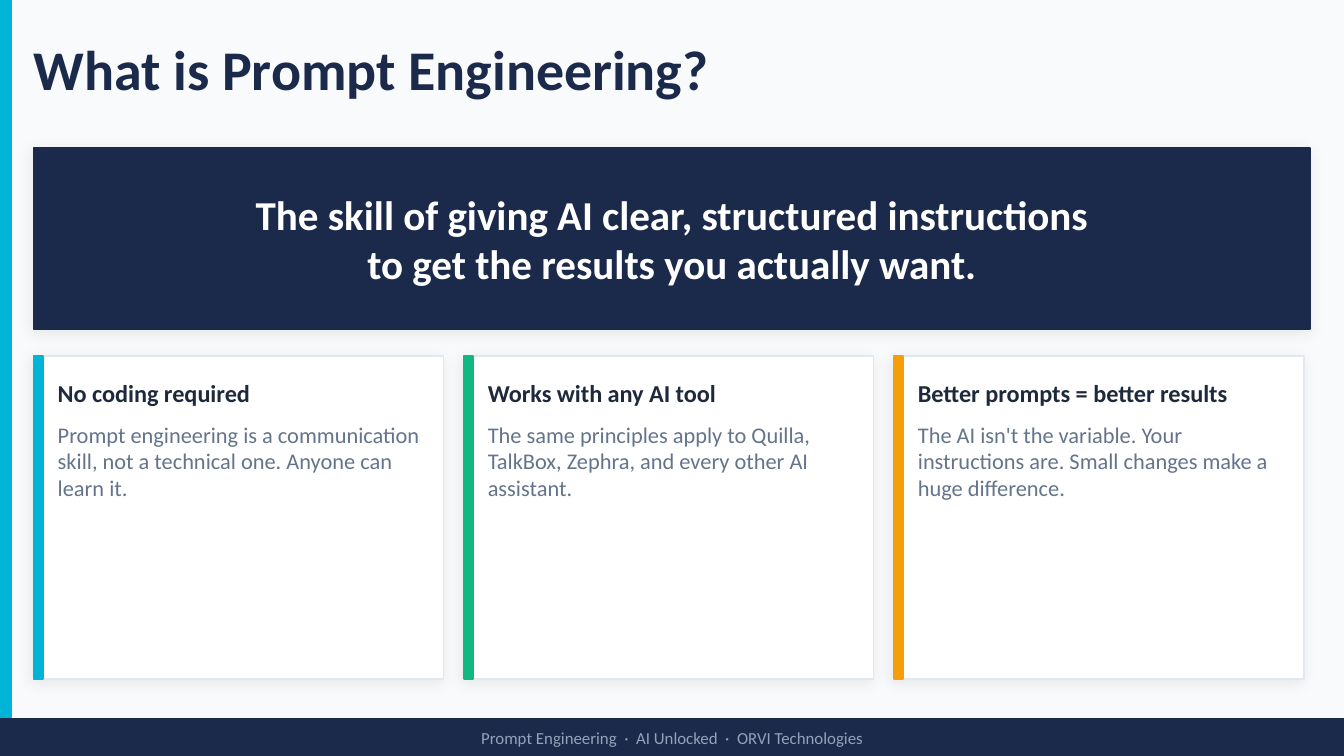
"""Build the slide that defines prompt engineering."""
from lxml.etree import SubElement
from pptx import Presentation
from pptx.dml.color import RGBColor
from pptx.enum.shapes import MSO_SHAPE
from pptx.enum.text import MSO_ANCHOR, MSO_AUTO_SIZE, PP_ALIGN
from pptx.oxml.ns import qn
from pptx.util import Inches, Pt

TITLE = "What is Prompt Engineering?"
DEFINITION = [
    "The skill of giving AI clear, structured instructions",
    "to get the results you actually want.",
]
CARDS = [
    ("No coding required",
     "Prompt engineering is a communication skill, not a technical one. Anyone can learn it.",
     "cyan"),
    ("Works with any AI tool",
     "The same principles apply to Quilla, TalkBox, Zephra, and every other AI assistant.",
     "green"),
    ("Better prompts = better results",
     "The AI isn't the variable. Your instructions are. Small changes make a huge difference.",
     "amber"),
]
FOOTER = "Prompt Engineering  ·  AI Unlocked  ·  ORVI Technologies"

THEME = {
    "font": "Calibri",
    "colors": {
        "page": "F8FAFC", "navy": "1B2A4A", "white": "FFFFFF", "border": "E2E8F0",
        "cyan": "00B4D8", "green": "10B981", "amber": "F59E0B",
        "heading": "1E293B", "body": "64748B", "footer": "94A3B8", "shadow": "000000",
    },
    "sizes": {"title": 30, "definition": 22, "heading": 13, "body": 12, "footer": 9},
}
WIDTH = 10
HEIGHT = WIDTH * 9 / 16
MARGIN = 0.25
FOOTER_TOP = 5.35
BANNER_TOP, BANNER_H = 1.1, 1.35
CARD_TOP, CARD_W, CARD_H, CARD_GAP = 2.65, 3.05, 2.4, 0.15


def color(name):
    return RGBColor.from_string(THEME["colors"][name])


def add_shadow(sp):
    effects = sp._element.spPr.find(qn("a:effectLst"))
    shadow = SubElement(effects, qn("a:outerShdw"), blurRad=str(Pt(8)), dist=str(Pt(2)),
                        dir=str(135 * 60000), algn="bl", rotWithShape="0")
    clr = SubElement(shadow, qn("a:srgbClr"), val=THEME["colors"]["shadow"])
    SubElement(clr, qn("a:alpha"), val="8000")


def add_rect(s, box, fill, line=None, shadow=False):
    sp = s.shapes.add_shape(MSO_SHAPE.RECTANGLE, *map(Inches, box))
    sp.shadow.inherit = False
    sp.fill.solid()
    sp.fill.fore_color.rgb = color(fill)
    sp.line.color.rgb = color(line or fill)
    sp.line.width = Pt(1)
    if shadow:
        add_shadow(sp)


def write(sp, lines, style, ink, bold=False, align=PP_ALIGN.LEFT, anchor=MSO_ANCHOR.MIDDLE):
    tf = sp.text_frame
    tf.word_wrap = True
    tf.auto_size = MSO_AUTO_SIZE.NONE
    tf.vertical_anchor = anchor
    tf.margin_left = tf.margin_top = tf.margin_right = tf.margin_bottom = 0
    tf.text = "\n".join(lines)
    for p in tf.paragraphs:
        p.alignment = align
        p.font.name = THEME["font"]
        p.font.size = Pt(THEME["sizes"][style])
        p.font.bold = bold
        p.font.color.rgb = color(ink)


def add_text(s, box, lines, style, ink, **options):
    write(s.shapes.add_textbox(*map(Inches, box)), lines, style, ink, **options)


def add_card(s, left, heading, body, accent):
    add_rect(s, (left, CARD_TOP, CARD_W, CARD_H), "white", "border", shadow=True)
    add_rect(s, (left, CARD_TOP, 0.07, CARD_H), accent)
    text_left, text_w = left + 0.18, CARD_W - 0.25
    add_text(s, (text_left, CARD_TOP + 0.1, text_w, 0.35), [heading], "heading", "heading",
             bold=True)
    add_text(s, (text_left, CARD_TOP + 0.48, text_w, 1.82), [body], "body", "body",
             anchor=MSO_ANCHOR.TOP)


def main():
    prs = Presentation()
    prs.slide_width, prs.slide_height = Inches(WIDTH), Inches(HEIGHT)
    s = prs.slides.add_slide(prs.slide_layouts[5])
    s.background.fill.solid()
    s.background.fill.fore_color.rgb = color("page")
    add_rect(s, (0, 0, 0.08, FOOTER_TOP), "cyan")

    content_w = WIDTH - 2 * MARGIN
    title = s.shapes.title
    title.left, title.top, title.width, title.height = map(
        Inches, (MARGIN, 0.12, content_w, 0.78))
    write(title, [TITLE], "title", "navy", bold=True)

    add_rect(s, (MARGIN, BANNER_TOP, content_w, BANNER_H), "navy", shadow=True)
    add_text(s, (MARGIN + 0.15, BANNER_TOP, content_w - 0.3, BANNER_H), DEFINITION,
             "definition", "white", bold=True, align=PP_ALIGN.CENTER)

    for i, card in enumerate(CARDS):
        add_card(s, MARGIN + i * (CARD_W + CARD_GAP), *card)

    footer_box = (0, FOOTER_TOP, WIDTH, HEIGHT - FOOTER_TOP)
    add_rect(s, footer_box, "navy")
    add_text(s, footer_box, [FOOTER], "footer", "footer", align=PP_ALIGN.CENTER)
    prs.save("out.pptx")


if __name__ == "__main__":
    main()
